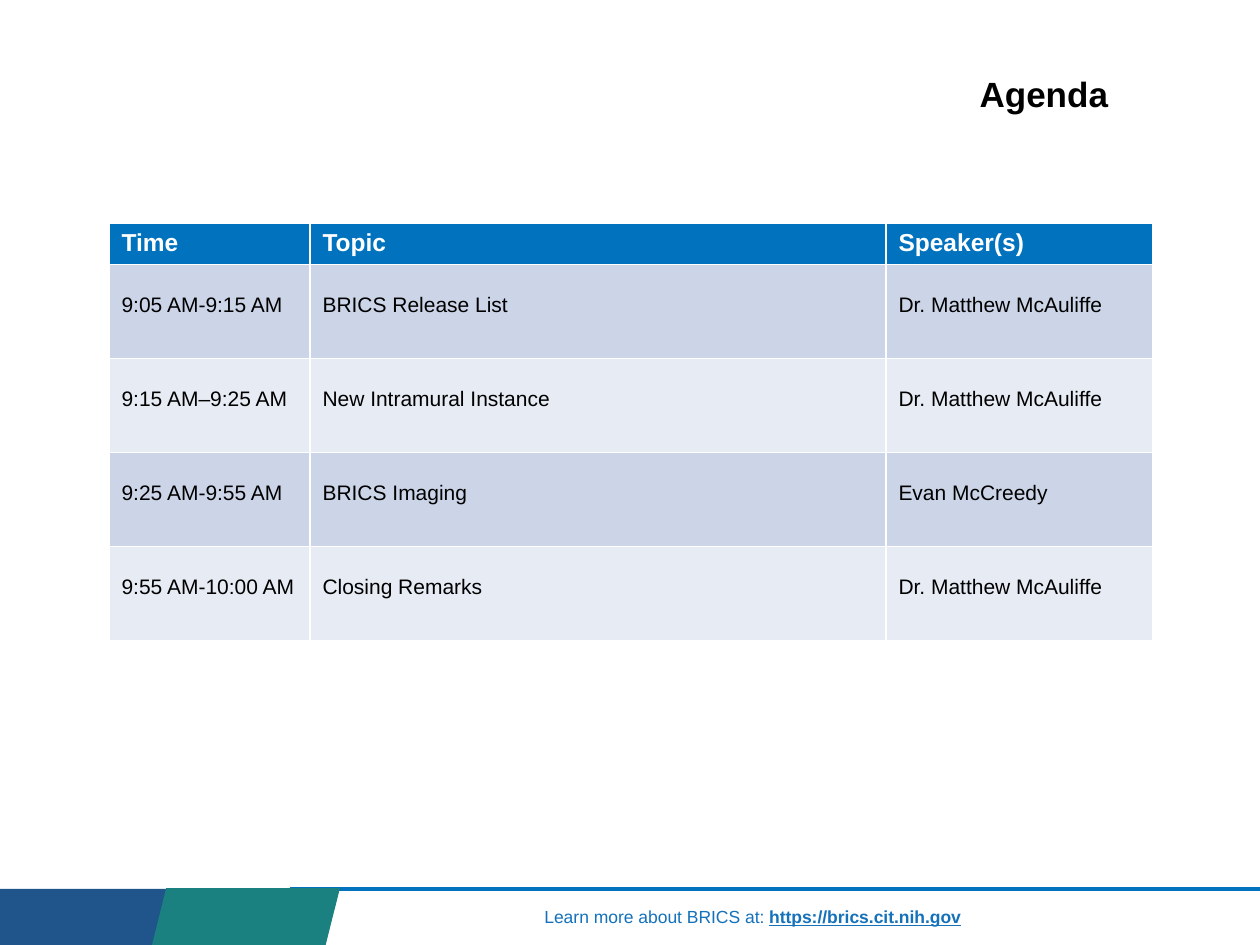
from dataclasses import dataclass
from typing import NamedTuple

import pptx
import pptx.dml.color
import pptx.enum.shapes
import pptx.enum.text
import pptx.oxml
import pptx.util
from lxml import etree

EMU_PER_PX = 914400 / 126


@dataclass(frozen=True)
class Theme:
    font: str = "Arial"
    black: str = "000000"
    white: str = "FFFFFF"
    header: str = "0072BE"
    bands: tuple[str, str] = ("CCD5E8", "E7EBF4")
    navy: str = "1F558A"
    teal: str = "1A8080"
    link: str = "1471BA"
    title_size: int = 20
    header_size: int = 14
    body_size: int = 12
    footer_size: int = 10


class Box(NamedTuple):
    left: int
    top: int
    width: int
    height: int


class Session(NamedTuple):
    time: str
    topic: str
    speaker: str


THEME = Theme()
HEADINGS = Session("Time", "Topic", "Speaker(s)")
SESSIONS = [
    Session("9:05 AM-9:15 AM", "BRICS Release List", "Dr. Matthew McAuliffe"),
    Session("9:15 AM–9:25 AM", "New Intramural Instance", "Dr. Matthew McAuliffe"),
    Session("9:25 AM-9:55 AM", "BRICS Imaging", "Evan McCreedy"),
    Session("9:55 AM-10:00 AM", "Closing Remarks", "Dr. Matthew McAuliffe"),
]
COLUMN_WIDTHS = (201, 576, 267)
HEADER_HEIGHT = 41
ROW_HEIGHT = 94
HEADER_MARGIN = 6
BODY_MARGIN = 29


def px(length: int) -> pptx.util.Emu:
    return pptx.util.Emu(round(length * EMU_PER_PX))


def rgb(color: str) -> pptx.dml.color.RGBColor:
    return pptx.dml.color.RGBColor.from_string(color)


def place(box: Box) -> tuple[pptx.util.Emu, ...]:
    return tuple(px(length) for length in box)


def style_font(font, size: int, color: str, bold: bool = False) -> None:
    font.name = THEME.font
    font.size = pptx.util.Pt(size)
    font.bold = bold
    font.color.rgb = rgb(color)


def add_title(slide, text: str, box: Box) -> None:
    title = slide.shapes.title
    title.left, title.top, title.width, title.height = place(box)
    frame = title.text_frame
    frame.text = text
    frame.auto_size = pptx.enum.text.MSO_AUTO_SIZE.NONE
    frame.vertical_anchor = pptx.enum.text.MSO_ANCHOR.MIDDLE
    paragraph = frame.paragraphs[0]
    paragraph.alignment = pptx.enum.text.PP_ALIGN.LEFT
    paragraph.line_spacing = 0.9
    style_font(paragraph.font, THEME.title_size, THEME.black, bold=True)


def add_block(slide, kind: pptx.enum.shapes.MSO_SHAPE, box: Box, color: str) -> None:
    shape = slide.shapes.add_shape(kind, *place(box))
    shape.shadow.inherit = False
    shape.fill.solid()
    shape.fill.fore_color.rgb = rgb(color)
    shape.line.fill.background()


def add_rule(slide, left: int, right: int, y: int) -> None:
    rule = slide.shapes.add_connector(
        pptx.enum.shapes.MSO_CONNECTOR.STRAIGHT, px(left), px(y), px(right), px(y))
    rule.line.color.rgb = rgb(THEME.header)
    rule.line.width = pptx.util.Pt(2)
    etree.SubElement(rule.element.spPr, pptx.oxml.ns.qn("a:effectLst"))


def add_footer_text(slide, box: Box) -> None:
    frame = slide.shapes.add_textbox(*place(box)).text_frame
    frame.word_wrap = False
    paragraph = frame.paragraphs[0]
    style_font(paragraph.font, THEME.footer_size, THEME.link)
    paragraph.add_run().text = "Learn more about BRICS at: "
    address = paragraph.add_run()
    address.text = "https://brics.cit.nih.gov"
    address.font.bold = True
    address.font.underline = True


def fill_row(table, index: int, session: Session, fill: str, size: int,
             color: str, top_margin: int, bold: bool = False) -> None:
    for cell, text in zip(table.rows[index].cells, session):
        cell.text = text
        cell.margin_top = px(top_margin)
        cell.fill.solid()
        cell.fill.fore_color.rgb = rgb(fill)
        style_font(cell.text_frame.paragraphs[0].font, size, color, bold)


def add_agenda(slide, left: int, top: int) -> None:
    """Add the agenda table; its white rules come from the default table style."""
    heights = [HEADER_HEIGHT] + [ROW_HEIGHT] * len(SESSIONS)
    box = Box(left, top, sum(COLUMN_WIDTHS), sum(heights))
    table = slide.shapes.add_table(
        len(heights), len(COLUMN_WIDTHS), *place(box)).table
    for column, width in zip(table.columns, COLUMN_WIDTHS):
        column.width = px(width)
    for row, height in zip(table.rows, heights):
        row.height = px(height)
    fill_row(table, 0, HEADINGS, THEME.header, THEME.header_size,
             THEME.white, HEADER_MARGIN, bold=True)
    for index, session in enumerate(SESSIONS):
        fill_row(table, index + 1, session, THEME.bands[index % 2],
                 THEME.body_size, THEME.black, BODY_MARGIN)


def main() -> None:
    presentation = pptx.Presentation()
    presentation.slide_width, presentation.slide_height = px(1260), px(945)
    slide = presentation.slides.add_slide(presentation.slide_layouts[5])
    shapes = pptx.enum.shapes.MSO_SHAPE

    add_rule(slide, 290, 1260, 889)
    add_block(slide, shapes.RECTANGLE, Box(0, 889, 173, 56), THEME.navy)
    add_footer_text(slide, Box(532, 900, 446, 34))
    add_block(slide, shapes.PARALLELOGRAM, Box(152, 888, 188, 57), THEME.teal)
    add_title(slide, "Agenda", Box(967, 66, 167, 60))
    add_agenda(slide, 109, 223)

    presentation.save("out.pptx")


if __name__ == "__main__":
    main()
